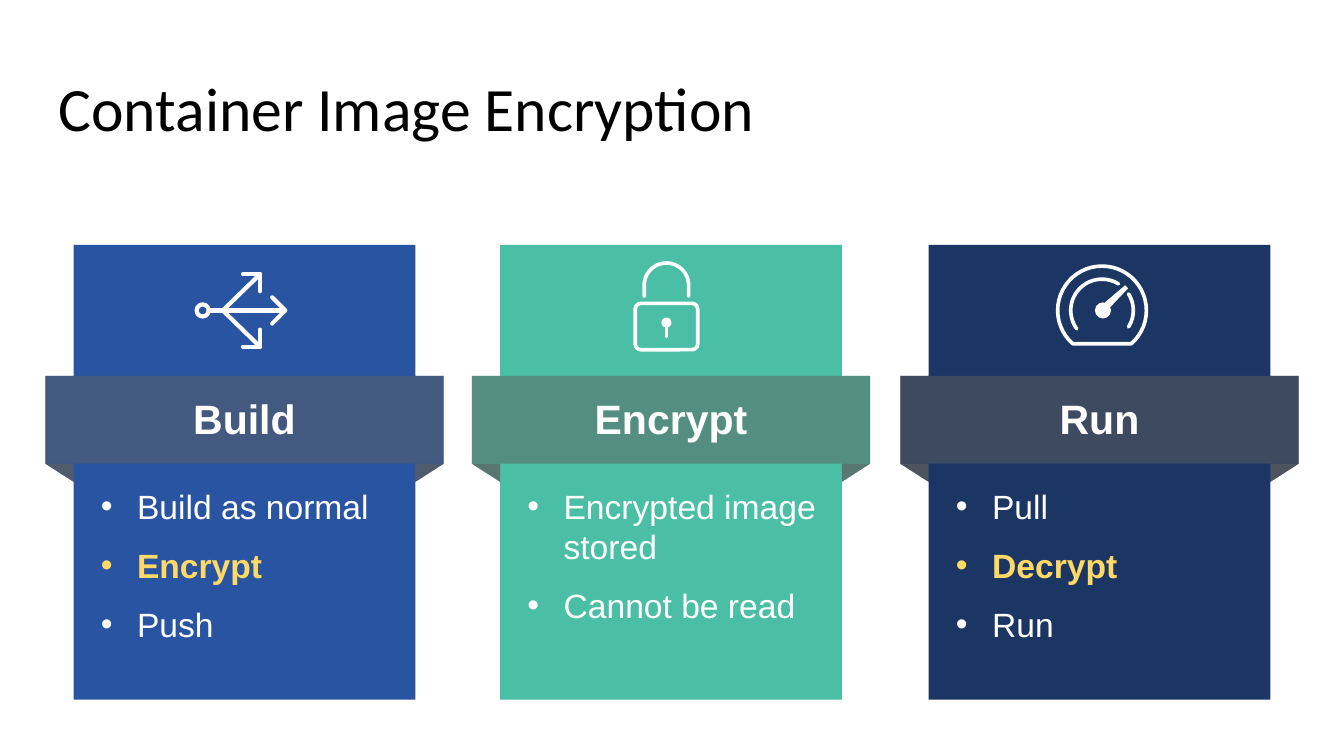
from math import cos, sin, radians
from lxml import etree
from pptx import Presentation
from pptx.dml.color import RGBColor
from pptx.enum.shapes import MSO_SHAPE as Shape
from pptx.enum.text import MSO_ANCHOR as Anchor, PP_ALIGN as Align
from pptx.oxml.ns import qn
from pptx.util import Inches, Pt

HEX = {"white": "FFFFFF", "black": "000000", "gold": "FFD966",
       "gray": "5E5E5E", "blue": "2954A1", "teal": "4BBFA6", "navy": "1C3664"}
TITLE = "Container Image Encryption"
# Label, colour, left edge, icon centre, list of (text, stressed)
CARDS = [
    ("Build", "blue", 0.45, 2.39,
     [("Build as normal", False), ("Encrypt", True), ("Push", False)]),
    ("Encrypt", "teal", 4.68, 6.61,
     [("Encrypted image stored", False), ("Cannot be read", False)]),
    ("Run", "navy", 8.93, 10.93,
     [("Pull", False), ("Decrypt", True), ("Run", False)]),
]
WIDE, FOLD, DROP = 3.95, 0.28, 0.18          # ribbon width, its overhang, fold height
TOP, BAND, HEM, END = 2.43, 3.73, 4.6, 6.94  # levels down a card
MID = 3.08                                   # level of the icons
THIN, THICK = 2.6, 3

deck = Presentation()
deck.slide_width, deck.slide_height = Inches(13.33), Inches(7.5)
slide = deck.slides.add_slide(deck.slide_layouts[5])
shapes = slide.shapes


def rgb(name):
    return RGBColor.from_string(HEX[name])


def paint(shape, fill=None, line=None, alpha=None):
    shape.shadow.inherit = False
    if fill:
        shape.fill.solid()
        shape.fill.fore_color.rgb = rgb(fill)
    else:
        shape.fill.background()
    if alpha:
        tint = shape.fill._xPr.find(".//" + qn("a:srgbClr"))
        etree.SubElement(tint, qn("a:alpha")).set("val", str(alpha * 1000))
    if line:
        shape.line.color.rgb = rgb("white")
        shape.line.width = Pt(line)
        ln = shape.line._get_or_add_ln()
        ln.set("cap", "rnd")
        etree.SubElement(ln, qn("a:round"))
    else:
        shape.line.fill.background()
    return shape


def block(kind, x, y, w, h, **look):
    return paint(shapes.add_shape(kind, *map(Inches, (x, y, w, h))), **look)


def trace(runs, x=0, y=0, close=False, **look):
    """Draw one freeform from lists of points, moved by x and y."""
    runs = [[(Inches(x + a), Inches(y + b)) for a, b in run] for run in runs]
    pen = shapes.build_freeform(*runs[0][0], scale=1.0)
    for i, run in enumerate(runs):
        if i:
            pen.move_to(*run[0])
        pen.add_line_segments(run[1:], close=close)
    return paint(pen.convert_to_shape(), **look)


def arc(r, start, stop, x=0, y=0):
    """Points along an arc, clockwise in degrees from the right."""
    steps = 40
    turns = [radians(start + (stop - start) * i / steps) for i in range(steps + 1)]
    return [(x + r * cos(t), y + r * sin(t)) for t in turns]


def disc(x, y, r, **look):
    block(Shape.OVAL, x - r, y - r, 2 * r, 2 * r, **look)


def fork(x):
    tip = [(0.02, -0.36), (0.19, -0.36), (0.19, -0.19)]
    arm = [(-0.18, 0), (0.19, -0.36)]
    runs = [[(-0.3, 0), (0.43, 0)], [(0.31, -0.13), (0.44, 0), (0.31, 0.13)]]
    for side in (1, -1):
        runs += [[(a, b * side) for a, b in run] for run in (tip, arm)]
    disc(x - 0.38, MID, 0.06, line=THICK)
    trace(runs, x, MID, line=THICK)


def lock(x):
    case = block(Shape.ROUNDED_RECTANGLE, x - 0.31, MID - 0.07, 0.62, 0.46, line=THIN)
    case.adjustments[0] = 0.12
    bow = [(-0.22, -0.14)] + arc(0.22, 180, 360, 0, -0.25) + [(0.22, -0.14)]
    trace([bow, [(0, 0.12), (0, 0.26)]], x, MID, line=THIN)
    disc(x, MID + 0.12, 0.05, fill="white")


def gauge(x):
    trace([arc(0.44, 131.4, 408.6)], x, MID, close=True, line=THIN)
    trace([arc(0.31, 144, 302), arc(0.31, -32, 32)], x, MID, line=THIN)
    needle = [(0.03, -0.08), (0.23, -0.25), (0.26, -0.22), (0.08, -0.03)]
    trace([needle], x, MID, close=True, fill="white")
    disc(x + 0.01, MID, 0.08, fill="white")


def box(x, y, w, h):
    frame = shapes.add_textbox(*map(Inches, (x, y, w, h))).text_frame
    frame.word_wrap = True
    inset(frame, 0.05)
    return frame


def inset(frame, gap):
    frame.margin_left = frame.margin_right = Inches(gap)
    frame.margin_top = frame.margin_bottom = Inches(gap)


def write(para, text, size, color="white", bold=False, face="Arial"):
    run = para.add_run()
    run.text = text
    font = run.font
    font.name, font.size, font.bold = face, Pt(size), bold
    font.color.rgb = rgb(color)


def bullet(para, color):
    props = para._p.get_or_add_pPr()
    props.set("marL", str(Inches(0.4)))
    props.set("indent", str(Inches(-0.36)))
    shade = etree.SubElement(props, qn("a:buClr"))
    etree.SubElement(shade, qn("a:srgbClr")).set("val", HEX[color])
    etree.SubElement(props, qn("a:buFont")).set("typeface", "Arial")
    etree.SubElement(props, qn("a:buChar")).set("char", "•")


def card(label, color, x, items):
    left, right, far = x + FOLD, x + WIDE - FOLD, x + WIDE
    low = HEM + DROP
    trace([[(left, TOP), (right, TOP), (right, BAND), (far, BAND), (far, HEM),
            (right, low), (right, END), (left, END), (left, low), (x, HEM),
            (x, BAND), (left, BAND)]], close=True, fill=color)
    block(Shape.RECTANGLE, x, BAND, WIDE, HEM - BAND, fill="gray", alpha=50)
    shift = (FOLD - DROP) / 2
    folds = [(x, HEM, FOLD, DROP, 180),
             (right + shift, HEM - shift, DROP, FOLD, 90)]
    for *place, turn in folds:
        fold = block(Shape.ISOSCELES_TRIANGLE, *place, fill="gray", alpha=75)
        fold.adjustments[0] = 0
        fold.rotation = turn

    frame = box(x + WIDE / 2 - 0.9, 3.87, 1.8, 0.55)
    frame.vertical_anchor = Anchor.MIDDLE
    frame.paragraphs[0].alignment = Align.CENTER
    write(frame.paragraphs[0], label, 29.3, bold=True)

    frame = box(x + 0.46, 4.77, 3.16, 2.04)
    for i, (text, stress) in enumerate(items):
        para = frame.add_paragraph() if i else frame.paragraphs[0]
        tone = "gold" if stress else "white"
        bullet(para, tone)
        if i:
            para.space_before = Pt(13.3)
        write(para, text, 24, tone, stress)


head = shapes.title
head.left, head.top, head.width, head.height = map(Inches, (0.45, 0.65, 12.42, 0.84))
inset(head.text_frame, 0.13)
head.text_frame.vertical_anchor = Anchor.TOP
line = head.text_frame.paragraphs[0]
line.alignment, line.line_spacing = Align.LEFT, 0.9
write(line, TITLE, 44, "black", face="Calibri")

for (label, color, x, mid, items), icon in zip(CARDS, (fork, lock, gauge)):
    card(label, color, x, items)
    icon(mid)

deck.save("out.pptx")
